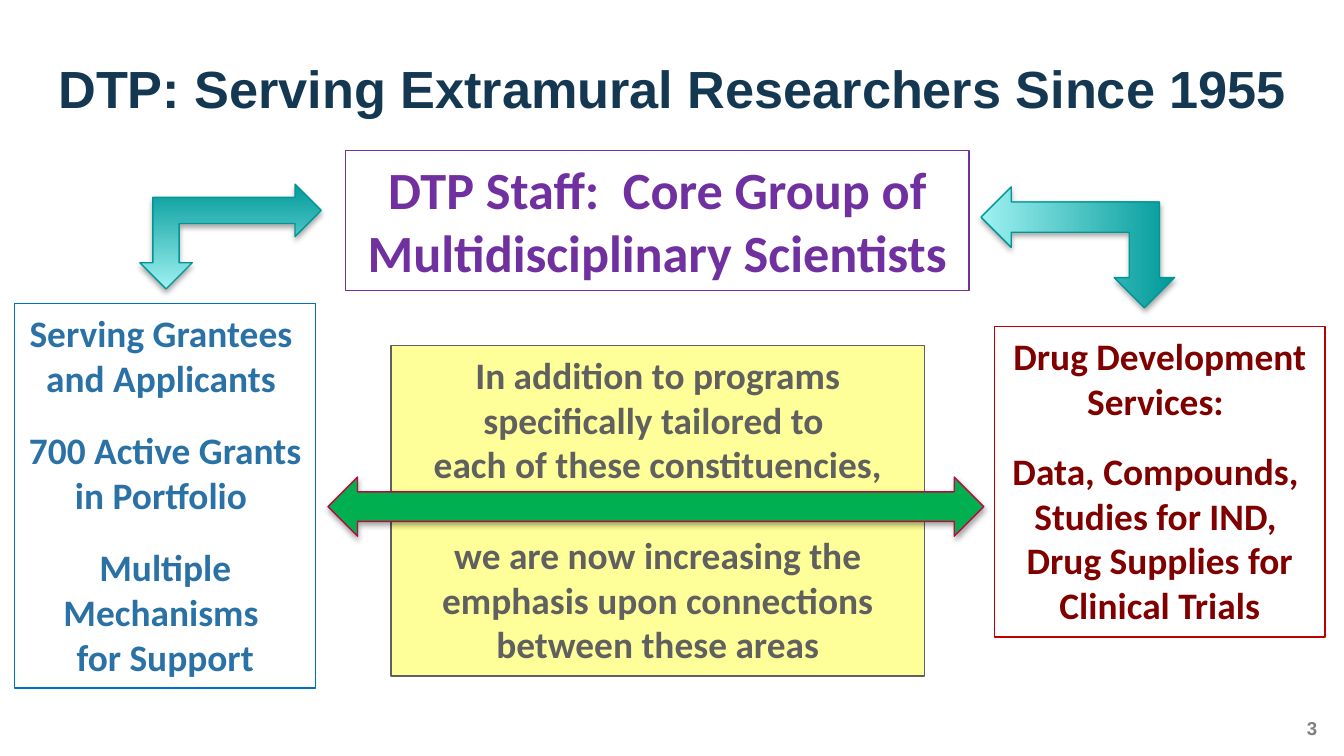
"""Build the slide on DTP staff and the two groups they serve."""
from dataclasses import dataclass
from typing import Optional

from lxml import etree
from pptx import Presentation
from pptx import util as u
from pptx.dml.color import RGBColor
from pptx.enum import shapes, text
from pptx.oxml import ns


@dataclass(frozen=True)
class Theme:
    heading_font: str = "Arial"
    body_font: str = "Calibri"
    title: str = "153852"
    number: str = "7F7F7F"
    purple: str = "7030A0"
    blue: str = "2A71A5"
    blue_line: str = "0070C0"
    maroon: str = "800000"
    red_line: str = "C00000"
    grey: str = "606060"
    yellow: str = "FFFF99"
    green: str = "00B050"
    crimson: str = "BB093A"
    teal: str = "009999"
    aqua: str = "9FF1F1"
    teal_line: str = "009696"
    title_size: float = 28
    body_size: float = 20
    number_size: float = 10
    line_width: float = 0.75


@dataclass(frozen=True)
class Box:
    at: tuple[float, float, float, float]
    groups: list[list[str]]
    color: str
    line: str
    size: float
    gap: float = 0
    fill: Optional[str] = None


@dataclass(frozen=True)
class Arrow:
    kind: shapes.MSO_SHAPE
    at: tuple[float, float, float, float]
    colors: tuple[str, ...]
    line: str
    rotation: float = 0
    angle: float = 90


T = Theme()

STAFF = Box(
    (2.57, 1.12, 4.64, 1.04),
    [["DTP Staff:  Core Group of Multidisciplinary Scientists"]],
    T.purple, T.purple, T.title_size)
GRANTEES = Box(
    (0.11, 2.26, 2.24, 2.86),
    [["Serving Grantees ", "and Applicants "],
     ["700 Active Grants", "in Portfolio "],
     ["Multiple Mechanisms ", "for Support"]],
    T.blue, T.blue_line, T.body_size, 14.6)
SERVICES = Box(
    (7.4, 2.43, 2.46, 2.31),
    [["Drug Development Services: "],
     ["Data, Compounds, ", "Studies for IND, ",
      "Drug Supplies for Clinical Trials"]],
    T.maroon, T.red_line, T.body_size, 13.4)
EMPHASIS = Box(
    (2.91, 2.57, 3.97, 2.46),
    [["In addition to programs specifically tailored to ",
      "each of these constituencies,"],
     ["we are now increasing the emphasis upon connections "
      "between these areas"]],
    T.grey, T.grey, T.body_size, 24.4, T.yellow)

TO_GRANTEES = Arrow(
    shapes.MSO_SHAPE.LEFT_UP_ARROW, (1.04, 1.37, 1.35, 0.78),
    (T.teal, T.aqua), T.teal_line, 180)
BETWEEN = Arrow(
    shapes.MSO_SHAPE.LEFT_RIGHT_ARROW, (2.44, 3.55, 4.88, 0.44),
    (T.green,), T.crimson)
TO_SERVICES = Arrow(
    shapes.MSO_SHAPE.LEFT_UP_ARROW, (7.57, 1.12, 0.9, 1.44),
    (T.teal, T.aqua), T.teal_line, 270)


def rgb(color: str) -> RGBColor:
    """Turn a hex string into a colour."""
    return RGBColor.from_string(color)


def style(p, font: str, size: float, color: str, align=text.PP_ALIGN.CENTER) -> None:
    """Format a paragraph and its runs in bold."""
    p.alignment = align
    for r in p.runs:
        r.font.name, r.font.size, r.font.bold = font, u.Pt(size), True
        r.font.color.rgb = rgb(color)


def outline(sp, color: str) -> None:
    """Give a shape a thin line."""
    sp.line.color.rgb = rgb(color)
    sp.line.width = u.Pt(T.line_width)


def drop_shadow(sp) -> None:
    """Put a soft black shadow below a shape."""
    sp.shadow.inherit = False
    effects = sp._element.spPr.find(ns.qn("a:effectLst"))
    shadow = etree.SubElement(
        effects, ns.qn("a:outerShdw"), blurRad=str(u.Pt(3.1)),
        dist=str(u.Pt(1.8)), dir="5400000", rotWithShape="0")
    color = etree.SubElement(shadow, ns.qn("a:srgbClr"), val="000000")
    etree.SubElement(color, ns.qn("a:alpha"), val="35000")


def draw_box(s, box: Box) -> None:
    """Draw a framed box with its groups of centred lines."""
    sp = s.shapes.add_shape(shapes.MSO_SHAPE.RECTANGLE, *map(u.Inches, box.at))
    sp.shadow.inherit = False
    outline(sp, box.line)
    if box.fill:
        sp.fill.solid()
        sp.fill.fore_color.rgb = rgb(box.fill)
    else:
        sp.fill.background()
    tf = sp.text_frame
    tf.word_wrap = True
    tf.auto_size = text.MSO_AUTO_SIZE.SHAPE_TO_FIT_TEXT
    tf.vertical_anchor = text.MSO_ANCHOR.TOP
    tf.text = "\n".join(line for group in box.groups for line in group)
    for p in tf.paragraphs:
        style(p, T.body_font, box.size, box.color)
    start = 0
    for group in box.groups[:-1]:
        start += len(group)
        tf.paragraphs[start].space_before = u.Pt(box.gap)


def draw_arrow(s, arrow: Arrow) -> None:
    """Draw a shadowed block arrow, plain or graded."""
    sp = s.shapes.add_shape(arrow.kind, *map(u.Inches, arrow.at))
    sp.rotation = arrow.rotation
    if len(arrow.colors) > 1:
        sp.fill.gradient()
        sp.fill.gradient_angle = arrow.angle
        for stop, color in zip(sp.fill.gradient_stops, arrow.colors):
            stop.color.rgb = rgb(color)
    else:
        sp.fill.solid()
        sp.fill.fore_color.rgb = rgb(arrow.colors[0])
    outline(sp, arrow.line)
    drop_shadow(sp)


def draw_title(s) -> None:
    """Fill and place the title placeholder."""
    sp = s.shapes.title
    sp.left, sp.top, sp.width, sp.height = map(u.Inches, (0, 0.32, 10, 0.56))
    tf = sp.text_frame
    tf.text = "DTP: Serving Extramural Researchers Since 1955"
    tf.word_wrap = True
    tf.auto_size = text.MSO_AUTO_SIZE.NONE
    tf.vertical_anchor = text.MSO_ANCHOR.TOP
    tf.margin_top = u.Inches(0.1)
    style(tf.paragraphs[0], T.heading_font, T.title_size, T.title)


def draw_number(s) -> None:
    """Write the slide number in the bottom right corner."""
    sp = s.shapes.add_textbox(*map(u.Inches, (9.46, 5.32, 0.34, 0.2)))
    tf = sp.text_frame
    tf.text = "3"
    tf.word_wrap = True
    tf.margin_left = tf.margin_right = tf.margin_top = tf.margin_bottom = 0
    tf.vertical_anchor = text.MSO_ANCHOR.MIDDLE
    style(tf.paragraphs[0], T.heading_font, T.number_size, T.number,
          text.PP_ALIGN.RIGHT)


def main() -> None:
    """Build and save the slide."""
    prs = Presentation()
    prs.slide_width = u.Inches(10)
    prs.slide_height = prs.slide_width * 9 // 16
    s = prs.slides.add_slide(prs.slide_layouts[5])
    draw_number(s)
    draw_title(s)
    draw_box(s, STAFF)
    draw_box(s, GRANTEES)
    draw_arrow(s, TO_GRANTEES)
    draw_box(s, SERVICES)
    draw_box(s, EMPHASIS)
    draw_arrow(s, BETWEEN)
    draw_arrow(s, TO_SERVICES)
    prs.save("out.pptx")


if __name__ == "__main__":
    main()
